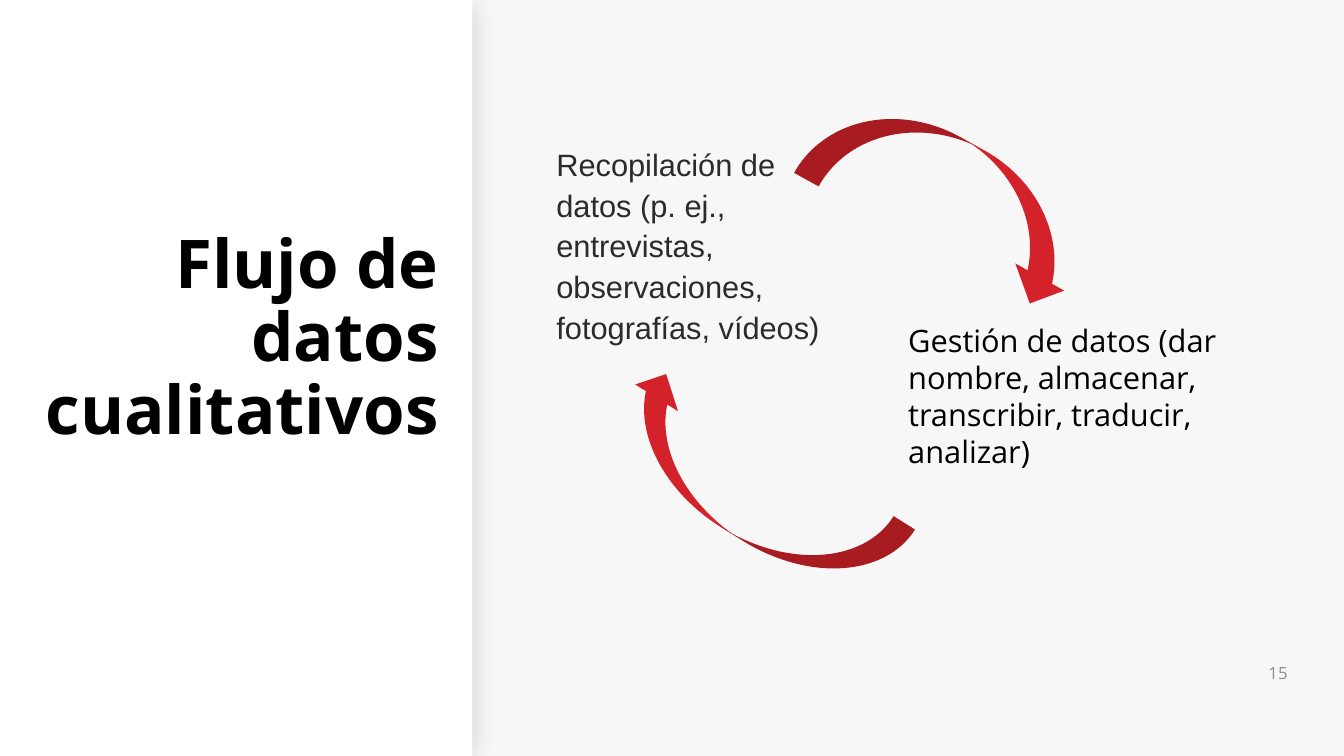
from lxml import etree
from pptx import Presentation
from pptx.dml.color import RGBColor
from pptx.enum.shapes import MSO_SHAPE
from pptx.enum.text import MSO_ANCHOR, MSO_AUTO_SIZE, PP_ALIGN
from pptx.oxml import parse_xml
from pptx.oxml.ns import nsdecls, qn
from pptx.util import Inches, Pt

RECTANGLE = MSO_SHAPE.RECTANGLE
DOWN_ARROW = MSO_SHAPE.CURVED_DOWN_ARROW
LEFT_ARROW = MSO_SHAPE.CURVED_LEFT_ARROW
TOP, MIDDLE = MSO_ANCHOR.TOP, MSO_ANCHOR.MIDDLE
LEFT, RIGHT = PP_ALIGN.LEFT, PP_ALIGN.RIGHT
GROW = MSO_AUTO_SIZE.SHAPE_TO_FIT_TEXT

WHITE = RGBColor(0xFF, 0xFF, 0xFF)
BLACK = RGBColor(0x00, 0x00, 0x00)
PALE = RGBColor(0xF7, 0xF7, 0xF7)
GRAY = RGBColor(0x8C, 0x8C, 0x8C)
CHARCOAL = RGBColor(0x2B, 0x2B, 0x2B)
RED = RGBColor(0xD3, 0x22, 0x29)

SHADOW = (
    f'<a:outerShdw {nsdecls("a")} blurRad="{Pt(16)}" dist="{Pt(3)}" '
    'dir="2700000" algn="tl" rotWithShape="0">'
    '<a:srgbClr val="000000"><a:alpha val="12000"/></a:srgbClr></a:outerShdw>'
)


def add_block(page, kind, left, top, width, height, color, rotation=0):
    block = page.shapes.add_shape(
        kind, Inches(left), Inches(top), Inches(width), Inches(height))
    block.shadow.inherit = False
    block.fill.solid()
    block.fill.fore_color.rgb = color
    block.line.fill.background()
    block.rotation = rotation
    return block


def add_text(page, left, top, width, height, text, size, color,
             font="Open Sans", bold=False, align=LEFT, anchor=TOP):
    box = page.shapes.add_textbox(
        Inches(left), Inches(top), Inches(width), Inches(height))
    frame = box.text_frame
    frame.word_wrap = True
    frame.vertical_anchor = anchor
    para = frame.paragraphs[0]
    para.alignment = align
    span = para.add_run()
    span.text = text
    span.font.size = Pt(size)
    span.font.name = font
    span.font.bold = bold
    span.font.color.rgb = color
    return frame


def add_title_panel(page, left, top, width, height):
    panel = add_block(page, RECTANGLE, left, top, width, height, WHITE)
    effects = panel._element.spPr.find(qn("a:effectLst"))
    effects.append(parse_xml(SHADOW))
    title = add_text(page, left + 0.28, top + 0.48, 4.18, 5.78,
                     "Flujo de datos cualitativos", 48, BLACK,
                     bold=True, align=RIGHT, anchor=MIDDLE)
    title.paragraphs[0].line_spacing = 0.9


def add_cycle(page, left, top):
    collection = add_text(
        page, left, top, 3.02, 2.2,
        "Recopilación de datos (p. ej., entrevistas, observaciones, "
        "fotografías, vídeos)", 22, CHARCOAL, font="Arial")
    collection.auto_size = GROW
    collection.paragraphs[0].line_spacing = 1.1
    collection.paragraphs[0].space_after = Pt(12)
    management = add_text(
        page, left + 3.49, top + 1.78, 3.5, 1.58,
        "Gestión de datos (dar nombre, almacenar, transcribir, traducir, "
        "analizar)", 22, BLACK)
    management.auto_size = GROW
    add_block(page, DOWN_ARROW, left + 2.54, top + 0.03, 2.95, 1.11, RED, 29)
    add_block(page, LEFT_ARROW, left + 1.55, top + 1.9, 1, 3.16, RED, 122)


def main():
    deck = Presentation()
    deck.slide_width = Inches(13.33)
    deck.slide_height = Inches(7.5)
    page = deck.slides.add_slide(deck.slide_layouts[6])
    add_block(page, RECTANGLE, 4.69, 0, 8.65, 7.5, PALE)
    add_title_panel(page, -0.01, 0, 4.69, 7.5)
    add_text(page, 11.83, 6.47, 1.04, 0.4, "15", 12, GRAY,
             align=RIGHT, anchor=MIDDLE)
    add_cycle(page, 5.42, 1.36)
    deck.save("out.pptx")


if __name__ == "__main__":
    main()
